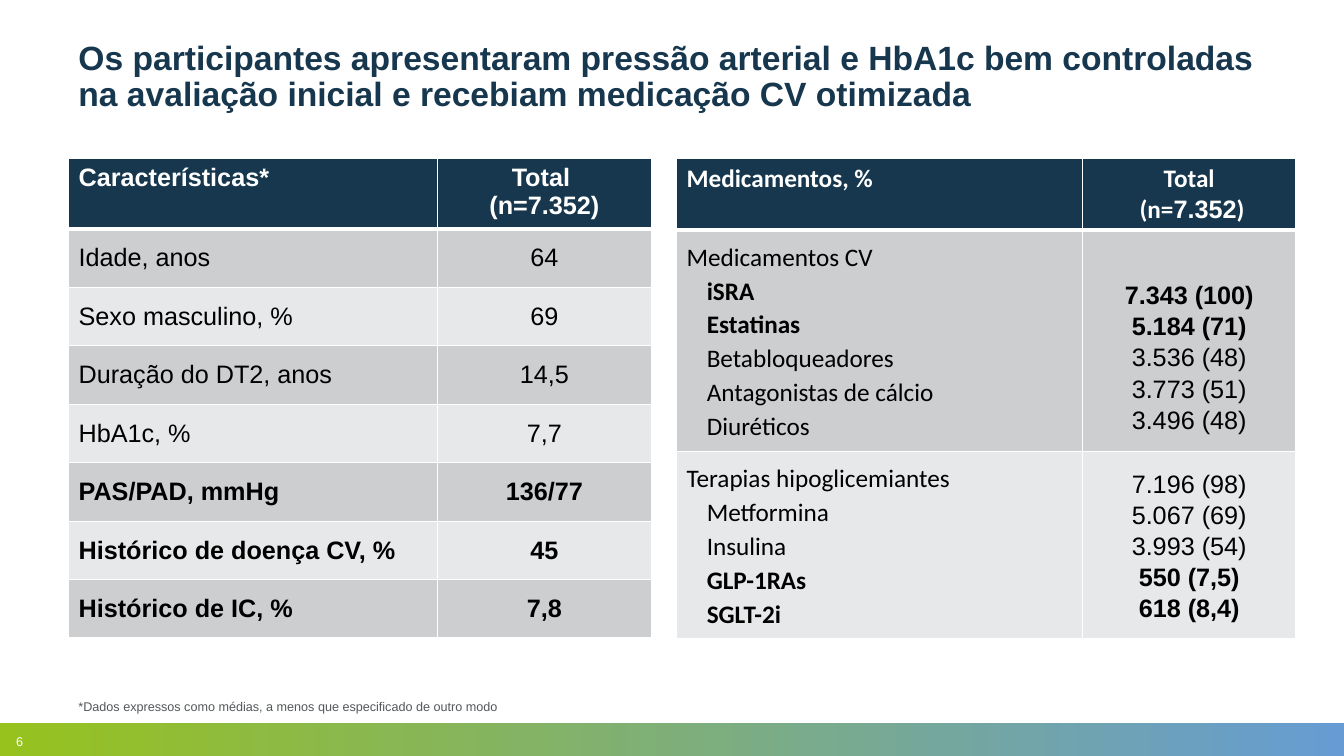
from lxml.etree import SubElement
from pptx import Presentation
from pptx.dml.color import RGBColor
from pptx.enum.shapes import MSO_SHAPE as Shape
from pptx.enum.text import MSO_ANCHOR as Anchor, PP_ALIGN as Align
from pptx.oxml.ns import qn
from pptx.util import Inches, Pt

NAVY, WHITE, BLACK = "16374D", "FFFFFF", "000000"
BANDS = ["CCCED0", "E7E8E9"]


def color(code):
    return RGBColor.from_string(code)


def write(para, text, size, code, bold=False, face="Arial"):
    """Add one run to a paragraph."""
    run = para.add_run()
    run.text = text
    font = run.font
    font.name, font.size, font.bold = face, Pt(size), bold
    font.color.rgb = color(code)


prs = Presentation()
prs.slide_width, prs.slide_height = Inches(13.33), Inches(7.5)
slide = prs.slides.add_slide(prs.slide_layouts[6])

# Footer band
band = slide.shapes.add_shape(
    Shape.RECTANGLE, 0, Inches(7.17), prs.slide_width, Inches(0.33))
band.shadow.inherit = False
band.line.fill.background()
band.fill.gradient()
band.fill.gradient_angle = 0
for stop, code, place in zip(band.fill.gradient_stops, ["97C21E", "669CD3"], [0, 1]):
    stop.color.rgb = color(code)
    stop.position = place

# Title, footnote and page number
title = ("Os participantes apresentaram pressão arterial e HbA1c bem controladas "
         "na avaliação inicial e recebiam medicação CV otimizada")
note = "*Dados expressos como médias, a menos que especificado de outro modo"
for text, place, inset, anchor, size, code, bold, space in [
    (title, (0.68, 0.36, 11.93, 1.05), 0.1, Anchor.TOP, 24, NAVY, True, 0.9),
    (note, (0.68, 6.58, 11.93, 0.55), 0.1, Anchor.BOTTOM, 9, "53585A", False, 1.0),
    ("6", (0.16, 7.23, 0.41, 0.25), 0, Anchor.BOTTOM, 9, WHITE, False, 1.0),
]:
    frame = slide.shapes.add_textbox(*map(Inches, place)).text_frame
    frame.word_wrap = True
    frame.margin_left = Inches(inset)
    frame.vertical_anchor = anchor
    para = frame.paragraphs[0]
    para.line_spacing = space
    write(para, text, size, code, bold)

# Each table row is a group of lines: label, value, bold
traits = [
    [("Idade, anos", "64", False)],
    [("Sexo masculino, %", "69", False)],
    [("Duração do DT2, anos", "14,5", False)],
    [("HbA1c, %", "7,7", False)],
    [("PAS/PAD, mmHg", "136/77", True)],
    [("Histórico de doença CV, %", "45", True)],
    [("Histórico de IC, %", "7,8", True)],
]
drugs = [
    [("Medicamentos CV", "", False),
     ("iSRA", "7.343 (100)", True),
     ("Estatinas", "5.184 (71)", True),
     ("Betabloqueadores", "3.536 (48)", False),
     ("Antagonistas de cálcio", "3.773 (51)", False),
     ("Diuréticos", "3.496 (48)", False)],
    [("Terapias hipoglicemiantes", "7.196 (98)", False),
     ("Metformina", "5.067 (69)", False),
     ("Insulina", "3.993 (54)", False),
     ("GLP-1RAs", "550 (7,5)", True),
     ("SGLT-2i", "618 (8,4)", True)],
]
tables = [
    (0.68, "Arial", [3.66, 2.12], [0.65] + [0.58] * 7,
     "Características*", "Total ", "(n=", traits),
    (6.71, "Calibri", [4.03, 2.11], [0.71, 2.2, 1.86],
     "Medicamentos, %", "Total", " (n=", drugs),
]

for left, face, widths, heights, head, total, start, groups in tables:
    table = slide.shapes.add_table(
        len(heights), 2, Inches(left), Inches(1.57),
        Inches(sum(widths)), Inches(sum(heights))).table
    table.first_row = table.horz_banding = False
    for col, width in zip(table.columns, widths):
        col.width = Inches(width)
    for row, height in zip(table.rows, heights):
        row.height = Inches(height)

    # Fills, insets and borders
    for r, row in enumerate(table.rows):
        for c, cell in enumerate(row.cells):
            cell.fill.solid()
            cell.fill.fore_color.rgb = color(BANDS[(r - 1) % 2] if r else NAVY)
            cell.vertical_anchor = Anchor.MIDDLE if r else Anchor.TOP
            if c:
                cell.margin_left = cell.margin_right = Inches(0.04)
                if r:
                    cell.margin_top = cell.margin_bottom = 0
            props = cell._tc.get_or_add_tcPr()
            for i, side in enumerate(["lnL", "lnR", "lnT", "lnB"]):
                thick = (side, r) in [("lnB", 0), ("lnT", 1)]
                line = SubElement(props, qn("a:" + side), w=str(Pt(3 if thick else 1)))
                fill = SubElement(line, qn("a:solidFill"))
                SubElement(fill, qn("a:srgbClr"), val=WHITE)
                props.insert(i, line)

    # Header
    write(table.cell(0, 0).text_frame.paragraphs[0], head, 18, WHITE, True, face)
    frame = table.cell(0, 1).text_frame
    top, count = frame.paragraphs[0], frame.add_paragraph()
    top.alignment = count.alignment = Align.CENTER
    write(top, total, 18, WHITE, True, face)
    write(count, start, 18, WHITE, True, face)
    write(count, "7.352", 18, WHITE, True)
    write(count, ")", 18, WHITE, True, face)

    # Body
    for r, group in enumerate(groups, 1):
        for c in range(2):
            cell = table.cell(r, c)
            frame = cell.text_frame
            lines = [(i, line[c], line[2]) for i, line in enumerate(group) if line[c]]
            if len(lines) < len(group):
                cell.margin_top = Inches(0.32)
            for n, (i, text, bold) in enumerate(lines):
                para = frame.add_paragraph() if n else frame.paragraphs[0]
                if len(group) > 1:
                    para.line_spacing = 1.1
                if c:
                    para.alignment = Align.CENTER
                elif i:
                    para._p.get_or_add_pPr().set("marL", str(Inches(0.2)))
                write(para, text, 18, BLACK, bold, "Arial" if c else face)

prs.save("out.pptx")
